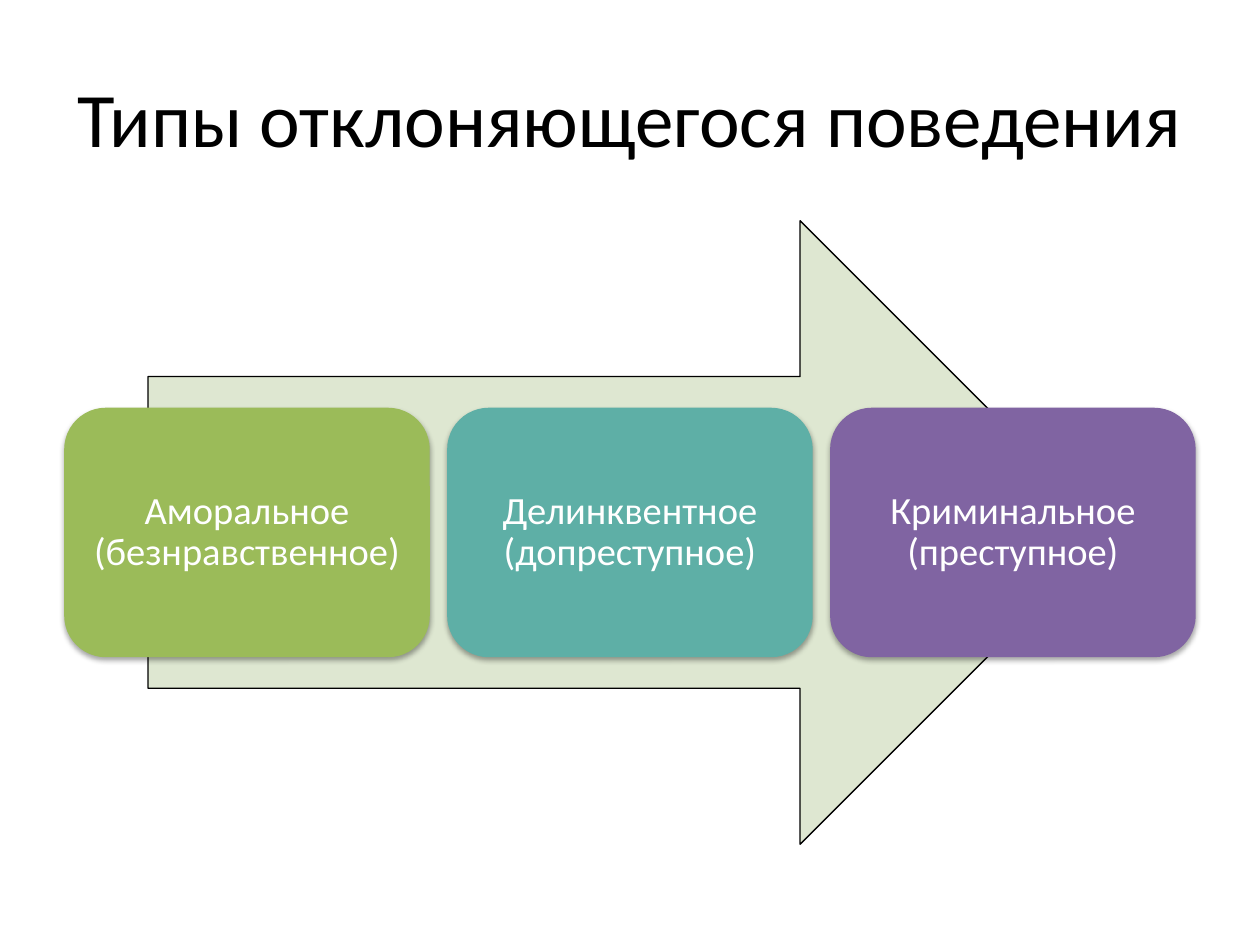
from lxml import etree
from pptx import Presentation
from pptx.dml.color import RGBColor
from pptx.enum.shapes import MSO_SHAPE
from pptx.enum.text import MSO_ANCHOR, PP_ALIGN
from pptx.oxml.ns import qn
from pptx.util import Cm, Pt

ARROW, CARD = MSO_SHAPE.RIGHT_ARROW, MSO_SHAPE.ROUNDED_RECTANGLE
CENTER, MIDDLE = PP_ALIGN.CENTER, MSO_ANCHOR.MIDDLE
TITLE_ONLY = 5

BLACK = RGBColor(0x00, 0x00, 0x00)
WHITE = RGBColor(0xFF, 0xFF, 0xFF)
PALE_GREEN = RGBColor(0xDE, 0xE7, 0xD1)
GREEN = RGBColor(0x9B, 0xBB, 0x59)
TEAL = RGBColor(0x5E, 0xAF, 0xA6)
PURPLE = RGBColor(0x80, 0x64, 0xA2)

# Content
HEADING = "Типы отклоняющегося поведения"
BEHAVIOURS = [
    ("Аморальное (безнравственное)", GREEN),
    ("Делинквентное (допреступное)", TEAL),
    ("Криминальное (преступное)", PURPLE),
]

# Layout, in cm
SLIDE_W, SLIDE_H = 25.4, 19.05
ARROW_W, ARROW_H, ARROW_TOP = 19.43, 12.57, 4.45
CARD_W, CARD_H, CARD_GAP = 7.37, 5.03, 0.35


def write(shape, text, *, size, color, spacing=None, margin=None):
    """Put centred text into a shape or placeholder."""
    frame = shape.text_frame
    frame.word_wrap = True
    frame.vertical_anchor = MIDDLE
    if margin is not None:
        frame.margin_left = frame.margin_right = margin
        frame.margin_top = frame.margin_bottom = margin
    paragraph = frame.paragraphs[0]
    paragraph.alignment = CENTER
    paragraph.line_spacing = spacing
    run = paragraph.add_run()
    run.text = text
    run.font.name = "Calibri"
    run.font.size = Pt(size)
    run.font.color.rgb = color


def add_filled(slide, kind, left, top, width, height, fill):
    shape = slide.shapes.add_shape(kind, Cm(left), Cm(top), Cm(width), Cm(height))
    shape.shadow.inherit = False
    shape.fill.solid()
    shape.fill.fore_color.rgb = fill
    return shape


def drop_shadow(shape):
    effects = shape._element.spPr.find(qn("a:effectLst"))
    shadow = etree.SubElement(
        effects, qn("a:outerShdw"), blurRad=str(Pt(3.1)), dist=str(Pt(1.8)),
        dir="5400000", rotWithShape="0")
    color = etree.SubElement(shadow, qn("a:srgbClr"), val=str(BLACK))
    etree.SubElement(color, qn("a:alpha"), val="35000")


def main():
    prs = Presentation()
    prs.slide_width, prs.slide_height = Cm(SLIDE_W), Cm(SLIDE_H)
    slide = prs.slides.add_slide(prs.slide_layouts[TITLE_ONLY])

    # Title
    title = slide.shapes.title
    title.left, title.top = Cm(1.27), Cm(0.76)
    title.width, title.height = Cm(22.86), Cm(3.18)
    write(title, HEADING, size=44, color=BLACK)

    # Arrow behind the cards
    arrow = add_filled(slide, ARROW, (SLIDE_W - ARROW_W) / 2, ARROW_TOP,
                       ARROW_W, ARROW_H, PALE_GREEN)
    arrow.line.color.rgb = BLACK
    arrow.line.width = Pt(0.75)

    # Cards, centred on the arrow
    count = len(BEHAVIOURS)
    row_left = (SLIDE_W - count * CARD_W - (count - 1) * CARD_GAP) / 2
    card_top = ARROW_TOP + (ARROW_H - CARD_H) / 2
    for i, (behaviour, fill) in enumerate(BEHAVIOURS):
        card = add_filled(slide, CARD, row_left + i * (CARD_W + CARD_GAP),
                          card_top, CARD_W, CARD_H, fill)
        card.line.fill.background()
        drop_shadow(card)
        write(card, behaviour, size=22, color=WHITE, spacing=0.9, margin=Cm(0))

    prs.save("out.pptx")


if __name__ == "__main__":
    main()
